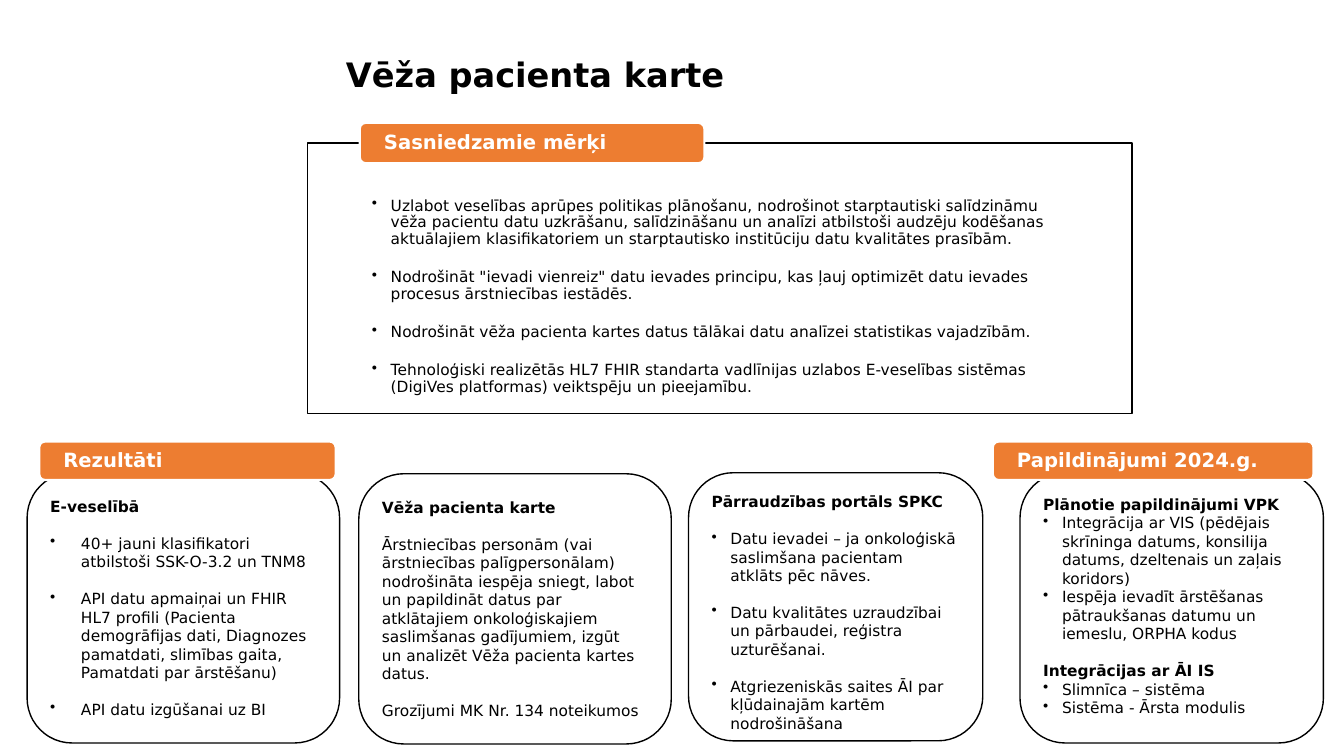
from dataclasses import dataclass

from lxml.etree import SubElement
from pptx import Presentation
from pptx.dml.color import RGBColor
from pptx.enum.shapes import MSO_SHAPE
from pptx.enum.text import MSO_ANCHOR, PP_ALIGN
from pptx.oxml.ns import qn
from pptx.util import Pt


@dataclass(frozen=True)
class Theme:
    font: str = "DejaVu Sans"
    ink: RGBColor = RGBColor(0x00, 0x00, 0x00)
    paper: RGBColor = RGBColor(0xFF, 0xFF, 0xFF)
    accent: RGBColor = RGBColor(0xED, 0x7D, 0x31)
    title: int = 24
    label: int = 14
    body: int = 11


@dataclass(frozen=True)
class Line:
    text: str
    gap: float = 0
    indent: float = 0
    bold: bool = False


THEME = Theme()
ROW = 13
TOP = 337.7

GOALS = [
    "Uzlabot veselības aprūpes politikas plānošanu, nodrošinot starptautiski "
    "salīdzināmu vēža pacientu datu uzkrāšanu, salīdzināšanu un analīzi atbilstoši "
    "audzēju kodēšanas aktuālajiem klasifikatoriem un starptautisko institūciju "
    "datu kvalitātes prasībām.",
    'Nodrošināt "ievadi vienreiz" datu ievades principu, kas ļauj optimizēt datu '
    "ievades procesus ārstniecības iestādēs.",
    "Nodrošināt vēža pacienta kartes datus tālākai datu analīzei statistikas "
    "vajadzībām.",
    "Tehnoloģiski realizētās HL7 FHIR standarta vadlīnijas uzlabos E-veselības "
    "sistēmas (DigiVes platformas) veiktspēju un pieejamību.",
]


def head(text, gap=0):
    return Line(text, gap, bold=True)


def item(text, gap=0, indent=13.5):
    return Line(text, gap, indent)


HEALTH = [
    head("E-veselībā"),
    item("40+ jauni klasifikatori atbilstoši SSK-O-3.2 un TNM8", ROW, 22),
    item("API datu apmaiņai un FHIR HL7 profili (Pacienta demogrāfijas dati, "
         "Diagnozes pamatdati, slimības gaita, Pamatdati par ārstēšanu)", ROW, 22),
    item("API datu izgūšanai uz BI", ROW, 22),
]
RECORD = [
    head("Vēža pacienta karte"),
    Line("Ārstniecības personām (vai ārstniecības palīgpersonālam) nodrošināta "
         "iespēja sniegt, labot un papildināt datus par atklātajiem onkoloģiskajiem "
         "saslimšanas gadījumiem, izgūt", ROW),
    Line("un analizēt Vēža pacienta kartes datus."),
    Line("Grozījumi MK Nr. 134 noteikumos", ROW),
]
PORTAL = [
    head("Pārraudzības portāls SPKC"),
    item("Datu ievadei – ja onkoloģiskā saslimšana pacientam atklāts pēc nāves.", ROW),
    item("Datu kvalitātes uzraudzībai un pārbaudei, reģistra uzturēšanai.", ROW),
    item("Atgriezeniskās saites ĀI par kļūdainajām kartēm nodrošināšana", ROW),
]
PLANS = [
    head("Plānotie papildinājumi VPK"),
    item("Integrācija ar VIS (pēdējais skrīninga datums, konsilija datums, "
         "dzeltenais un zaļais koridors)"),
    item("Iespēja ievadīt ārstēšanas pātraukšanas datumu un iemeslu, ORPHA kodus"),
    head("Integrācijas ar ĀI IS", ROW),
    item("Slimnīca – sistēma"),
    item("Sistēma - Ārsta modulis"),
]


def set_frame(frame, insets, anchor):
    frame.word_wrap = True
    frame.vertical_anchor = anchor
    (frame.margin_left, frame.margin_top,
     frame.margin_right, frame.margin_bottom) = map(Pt, insets)


def add_bullet(para, indent):
    props = para._p.get_or_add_pPr()
    props.set("marL", str(Pt(indent)))
    props.set("indent", str(-Pt(indent)))
    SubElement(props, qn("a:buChar")).set("char", "•")


def fill_text(frame, lines, size, color, spacing=1.0):
    for index, line in enumerate(lines):
        para = frame.add_paragraph() if index else frame.paragraphs[0]
        para.text = line.text
        para.alignment = PP_ALIGN.LEFT
        para.line_spacing = spacing
        if line.indent:
            add_bullet(para, line.indent)
        if line.gap:
            para.space_before = Pt(line.gap)
        for run in para.runs:
            run.font.name = THEME.font
            run.font.size = Pt(size)
            run.font.bold = line.bold
            run.font.color.rgb = color


def add_box(slide, kind, place, fill, edge, width):
    box = slide.shapes.add_shape(kind, *map(Pt, place))
    box.shadow.inherit = False
    box.fill.solid()
    box.fill.fore_color.rgb = fill
    box.line.color.rgb = edge
    box.line.width = Pt(width)
    return box


def add_title(slide, text):
    box = slide.shapes.add_textbox(Pt(240), Pt(38), Pt(547), Pt(85))
    set_frame(box.text_frame, (7.2, 3.6, 7.2, 3.6), MSO_ANCHOR.TOP)
    fill_text(box.text_frame, [head(text)], THEME.title, THEME.ink, 0.9)


def add_panel(slide, goals):
    box = add_box(slide, MSO_SHAPE.RECTANGLE, (219.6, 102.2, 589, 193),
                  THEME.paper, THEME.ink, 1)
    set_frame(box.text_frame, (46, 39, 46, 8), MSO_ANCHOR.TOP)
    lines = [item(goal, 15.5 if index else 0) for index, goal in enumerate(goals)]
    fill_text(box.text_frame, lines, THEME.body, THEME.ink, 0.9)


def add_label(slide, text, place):
    box = add_box(slide, MSO_SHAPE.ROUNDED_RECTANGLE, place,
                  THEME.accent, THEME.paper, 1.5)
    box.adjustments[0] = 0.15
    set_frame(box.text_frame, (16, 1, 16, 1), MSO_ANCHOR.MIDDLE)
    fill_text(box.text_frame, [head(text)], THEME.label, THEME.paper, 0.9)


def add_card(slide, lines, place, above=3.6, below=3.6):
    box = add_box(slide, MSO_SHAPE.ROUNDED_RECTANGLE, place,
                  THEME.paper, THEME.ink, 1)
    set_frame(box.text_frame, (7.2, above, 7.2, below), MSO_ANCHOR.MIDDLE)
    fill_text(box.text_frame, lines, THEME.body, THEME.ink)


def main():
    deck = Presentation()
    deck.slide_width, deck.slide_height = Pt(960), Pt(540)
    slide = deck.slides.add_slide(deck.slide_layouts[6])

    add_title(slide, "Vēža pacienta karte")
    add_panel(slide, GOALS)
    add_label(slide, "Sasniedzamie mērķi", (257, 87.8, 246.2, 28.8))

    add_card(slide, HEALTH, (19.4, TOP, 223.2, 193))
    add_card(slide, RECORD, (256.3, TOP + 0.7, 223.2, 193))
    add_card(slide, PORTAL, (491.8, TOP, 210.2, 191.5), 8, 0)
    add_card(slide, PLANS, (728.6, TOP, 216.7, 193), 2, 5)
    add_label(slide, "Rezultāti", (28.1, 315.4, 211.7, 27.4))
    add_label(slide, "Papildinājumi 2024.g.", (709.2, 315.4, 229, 27.4))

    deck.save("out.pptx")


if __name__ == "__main__":
    main()
